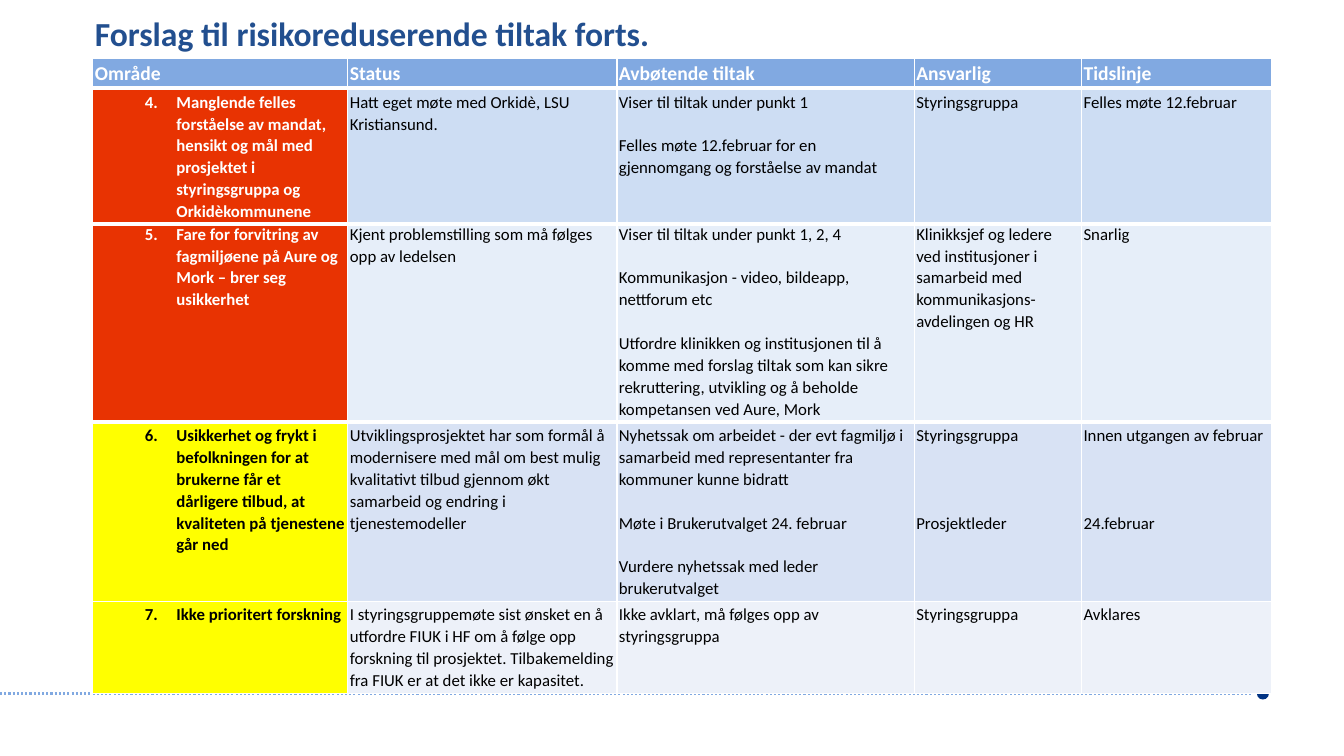
from dataclasses import dataclass

from lxml import etree
from pptx import Presentation
from pptx import util as u
from pptx.dml.color import RGBColor
from pptx.enum import dml, shapes, text
from pptx.oxml import ns


@dataclass(frozen=True)
class Theme:
    font: str = "Calibri"
    title_size: float = 24
    header_size: float = 14
    body_size: float = 12
    title: str = "224F8F"
    header: str = "81A9E1"
    dot: str = "003283"
    white: str = "FFFFFF"
    black: str = "000000"
    red: str = "E83302"
    yellow: str = "FFFF00"


THEME = Theme()
LEFT = 66.3
COL_WIDTHS = (182.2, 192.2, 212.4, 119.5, 136.1)
BLANK_LINE = 15.67
HEADERS = ("Område", "Status", "Avbøtende tiltak", "Ansvarlig", "Tidslinje")


@dataclass(frozen=True)
class Risk:
    """One risk row; each cell lists its paragraphs, gap is in lines between them."""
    number: int
    area: str
    cells: tuple
    area_fill: str
    area_color: str
    fill: str
    height: float
    gaps: tuple = (1, 1, 1, 1)
    bottom: float = 3


RISKS = (
    Risk(4, "Manglende felles forståelse av mandat, hensikt og mål med prosjektet i "
            "styringsgruppa og Orkidèkommunene",
         (["Hatt eget møte med Orkidè, LSU Kristiansund."],
          ["Viser til tiltak under punkt 1",
           "Felles møte 12.februar for en gjennomgang og forståelse av mandat"],
          ["Styringsgruppa"],
          ["Felles møte 12.februar"]),
         THEME.red, THEME.white, "CDDDF3", 96),
    Risk(5, "Fare for forvitring av fagmiljøene på Aure og Mork – brer seg usikkerhet",
         (["Kjent problemstilling som må følges opp av ledelsen"],
          ["Viser til tiltak under punkt 1, 2, 4",
           "Kommunikasjon - video, bildeapp, nettforum etc",
           "Utfordre klinikken og institusjonen til å komme med forslag tiltak som kan "
           "sikre rekruttering, utvikling og å beholde kompetansen ved Aure, Mork"],
          ["Klinikksjef og ledere ved institusjoner i samarbeid med "
           "kommunikasjons-avdelingen og HR"],
          ["Snarlig"]),
         THEME.red, THEME.white, "E6EEF9", 143),
    Risk(6, "Usikkerhet og frykt i befolkningen for at brukerne får et dårligere tilbud, "
            "at kvaliteten på tjenestene går ned",
         (["Utviklingsprosjektet har som formål å modernisere med mål om best mulig "
           "kvalitativt tilbud gjennom økt samarbeid og endring i tjenestemodeller"],
          ["Nyhetssak om arbeidet - der evt fagmiljø i samarbeid med representanter fra "
           "kommuner kunne bidratt",
           "Møte i Brukerutvalget 24. februar",
           "Vurdere nyhetssak med leder brukerutvalget"],
          ["Styringsgruppa", "Prosjektleder"],
          ["Innen utgangen av februar", "24.februar"]),
         THEME.yellow, THEME.black, "D8E2F4", 128, gaps=(1, 1, 3, 3), bottom=1),
    Risk(7, "Ikke prioritert forskning",
         (["I styringsgruppemøte sist ønsket en å utfordre FIUK i HF om å følge opp "
           "forskning til prosjektet. Tilbakemelding fra FIUK er at det ikke er kapasitet."],
          ["Ikke avklart, må følges opp av styringsgruppa"],
          ["Styringsgruppa"],
          ["Avklares"]),
         THEME.yellow, THEME.black, "EDF1F9", 66, bottom=1),
)


def rgb(color):
    return RGBColor.from_string(color)


def add_run(p, words, size, color, bold):
    r = p.add_run()
    r.text = words
    r.font.name = THEME.font
    r.font.size = u.Pt(size)
    r.font.bold = bold
    r.font.color.rgb = rgb(color)


def set_borders(cell, bottom):
    tc_pr = cell._tc.get_or_add_tcPr()
    for i, (side, width) in enumerate((("L", 1), ("R", 1), ("T", 1), ("B", bottom))):
        ln = etree.Element(ns.qn(f"a:ln{side}"), w=str(u.Pt(width)))
        fill = etree.SubElement(ln, ns.qn("a:solidFill"))
        etree.SubElement(fill, ns.qn("a:srgbClr"), val=THEME.white)
        tc_pr.insert(i, ln)


def number_paragraph(p, start):
    """Give the paragraph a hanging automatic number."""
    p_pr = p._p.get_or_add_pPr()
    p_pr.set("marL", str(u.Pt(58.3)))
    p_pr.set("indent", str(u.Pt(-22.5)))
    etree.SubElement(p_pr, ns.qn("a:buAutoNum"), type="arabicPeriod", startAt=str(start))


def fill_cell(cell, paragraphs, fill, color, size=THEME.body_size, bold=False,
              bottom=3, gap=1, number=None):
    cell.margin_left = cell.margin_right = u.Pt(1.44)
    cell.margin_top = cell.margin_bottom = u.Pt(1.44)
    cell.fill.solid()
    cell.fill.fore_color.rgb = rgb(fill)
    set_borders(cell, bottom)
    tf = cell.text_frame
    for i, words in enumerate(paragraphs):
        p = tf.add_paragraph() if i else tf.paragraphs[0]
        p.line_spacing = 1.07
        if i:
            p.space_before = u.Pt(gap * BLANK_LINE)
        if number:
            number_paragraph(p, number)
        add_run(p, words, size, color, bold)


def add_grid(s, top, heights):
    frame = s.shapes.add_table(len(heights), len(COL_WIDTHS), u.Pt(LEFT), u.Pt(top),
                               u.Pt(sum(COL_WIDTHS)), u.Pt(sum(heights)))
    table = frame.table
    table.first_row = table.horz_banding = False
    for column, width in zip(table.columns, COL_WIDTHS):
        column.width = u.Pt(width)
    for row, height in zip(table.rows, heights):
        row.height = u.Pt(height)
    return table


def add_header(s, top):
    table = add_grid(s, top, [21])
    for cell, words in zip(table.rows[0].cells, HEADERS):
        fill_cell(cell, [words], THEME.header, THEME.white, THEME.header_size, True)


def add_risks(s, top, risks):
    table = add_grid(s, top, [risk.height for risk in risks])
    for row, risk in zip(table.rows, risks):
        area, *others = row.cells
        fill_cell(area, [risk.area], risk.area_fill, risk.area_color, bold=True,
                  bottom=risk.bottom, number=risk.number)
        for cell, paragraphs, gap in zip(others, risk.cells, risk.gaps):
            fill_cell(cell, paragraphs, risk.fill, THEME.black, bottom=risk.bottom, gap=gap)


def add_footer_mark(s):
    """Draw the dotted rule that ends in a round dot."""
    y = 495.4
    rule = s.shapes.add_connector(shapes.MSO_CONNECTOR.STRAIGHT,
                                  0, u.Pt(y), u.Pt(894.2), u.Pt(y))
    rule.line.color.rgb = rgb(THEME.header)
    rule.line.width = u.Pt(1.5)
    rule.line.dash_style = dml.MSO_LINE.ROUND_DOT
    etree.SubElement(rule._element.spPr, ns.qn("a:effectLst"))
    dot = s.shapes.add_shape(shapes.MSO_SHAPE.OVAL, u.Pt(897.8), u.Pt(491.1),
                             u.Pt(8.6), u.Pt(8.6))
    dot.shadow.inherit = False
    dot.fill.solid()
    dot.fill.fore_color.rgb = rgb(THEME.dot)
    dot.line.fill.background()


def set_title(s, words):
    sp = s.shapes.title
    sp.left, sp.top, sp.width, sp.height = (u.Pt(v) for v in (60.5, 5.8, 491, 36))
    tf = sp.text_frame
    tf.auto_size = text.MSO_AUTO_SIZE.NONE
    tf.vertical_anchor = text.MSO_ANCHOR.TOP
    p = tf.paragraphs[0]
    p.alignment = text.PP_ALIGN.LEFT
    add_run(p, words, THEME.title_size, THEME.title, True)


def main():
    prs = Presentation()
    prs.slide_width, prs.slide_height = u.Pt(960), u.Pt(540)
    s = prs.slides.add_slide(prs.slide_layouts[5])
    add_footer_mark(s)
    add_risks(s, 157.7, RISKS[1:])
    add_risks(s, 63.4, RISKS[:1])
    add_header(s, 41.8)
    set_title(s, "Forslag til risikoreduserende tiltak forts.")
    prs.save("out.pptx")


if __name__ == "__main__":
    main()
